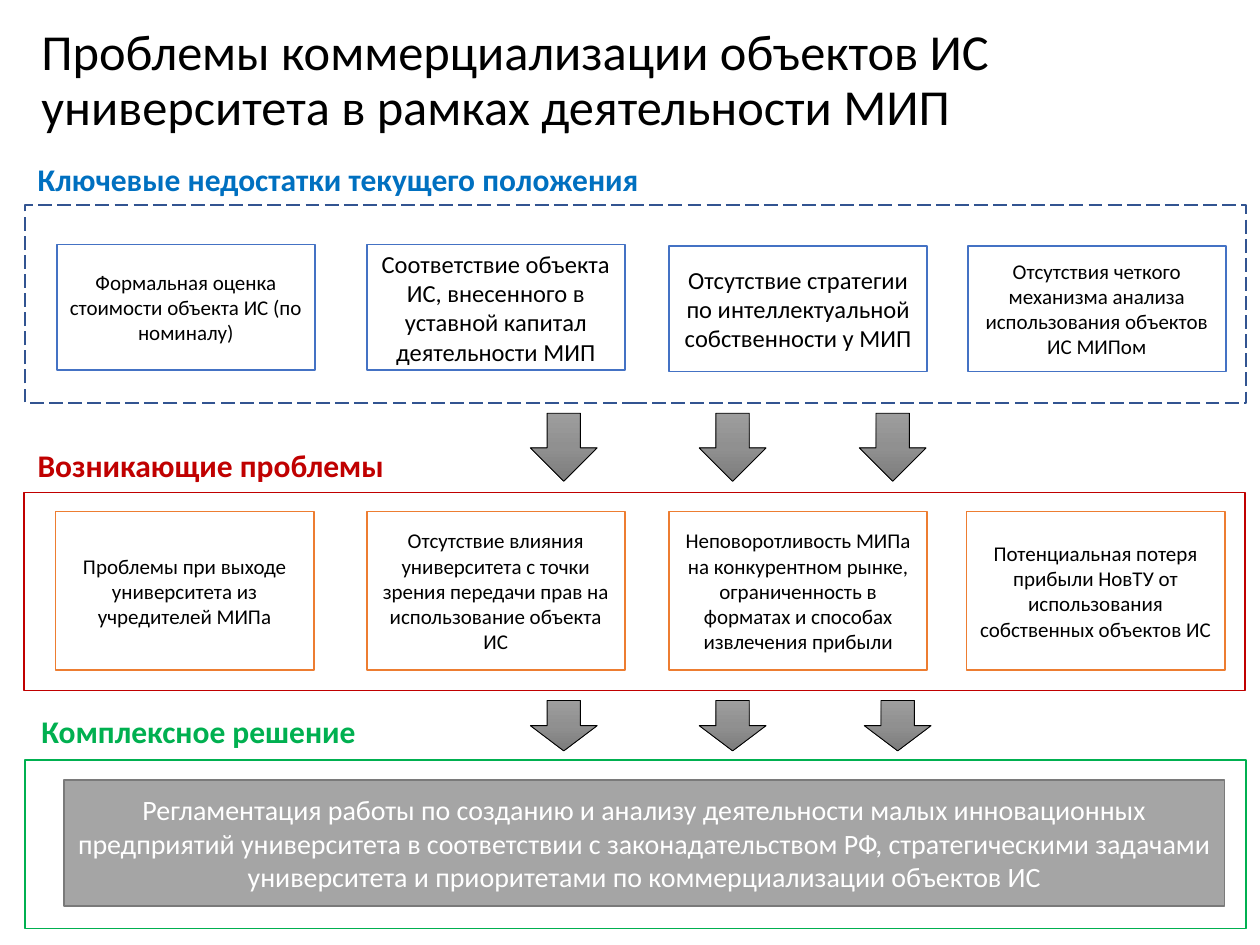
from copy import deepcopy
from dataclasses import dataclass

from pptx import Presentation
from pptx.dml.color import RGBColor
from pptx.enum.dml import MSO_LINE
from pptx.enum.shapes import MSO_SHAPE
from pptx.enum.text import MSO_ANCHOR, MSO_AUTO_SIZE, PP_ALIGN
from pptx.oxml.ns import qn
from pptx.util import Inches, Pt

RECTANGLE = MSO_SHAPE.RECTANGLE
DOWN_ARROW = MSO_SHAPE.DOWN_ARROW
LONG_DASH = MSO_LINE.LONG_DASH
MIDDLE = MSO_ANCHOR.MIDDLE
CENTER = PP_ALIGN.CENTER
FIT_SHAPE = MSO_AUTO_SIZE.SHAPE_TO_FIT_TEXT


@dataclass(frozen=True)
class Theme:
    font: str = "Calibri"
    black: str = "000000"
    white: str = "FFFFFF"
    flaw_heading: str = "0070C0"
    flaw_frame: str = "325491"
    flaw_card: str = "4472C4"
    problem: str = "C00000"
    problem_card: str = "ED7D31"
    solution: str = "00B050"
    solution_fill: str = "A5A5A5"
    solution_line: str = "7A7A7A"
    arrow_stops: tuple = ((0, "9D9D9D"), (0.5, "909090"), (1, "7C7C7C"))
    title_size: float = 28.8
    heading_size: int = 18
    solution_size: int = 16
    large_size: int = 14
    small_size: int = 12
    line_width: int = 1
    arrow_line_width: float = 0.5


THEME = Theme()
CARD_WIDTH = 2.05
ARROW_WIDTH = 0.53

FLAWS = (
    (0.45, 1.94, THEME.small_size, "Формальная оценка стоимости объекта ИС (по номиналу)"),
    (2.91, 1.94, THEME.large_size,
     "Соответствие объекта ИС, внесенного в уставной капитал деятельности МИП"),
    (5.31, 1.95, THEME.large_size,
     "Отсутствие стратегии по интеллектуальной собственности у МИП"),
    (7.68, 1.95, THEME.small_size,
     "Отсутствия четкого механизма анализа использования объектов ИС МИПом"),
)
PROBLEMS = (
    (0.44, "Проблемы при выходе университета из учредителей МИПа"),
    (2.91, "Отсутствие влияния университета с точки зрения передачи прав "
           "на использование объекта ИС"),
    (5.31, "Неповоротливость МИПа на конкурентном рынке, ограниченность "
           "в форматах и способах извлечения прибыли"),
    (7.67, "Потенциальная потеря прибыли НовТУ от использования "
           "собственных объектов ИС"),
)
SOLUTION = (
    "Регламентация работы по созданию и анализу деятельности малых инновационных "
    "предприятий университета в соответствии с законадательством РФ, стратегическими "
    "задачами университета и приоритетами по коммерциализации объектов ИС"
)


def apply_format(target, values):
    for name, value in values.items():
        setattr(target, name, value)


def write_text(shape, text, size, color, frame_format, paragraph_format, bold=False):
    frame = shape.text_frame
    frame.text = text
    apply_format(frame, frame_format)
    paragraph = frame.paragraphs[0]
    apply_format(paragraph, paragraph_format)
    font = paragraph.runs[0].font
    apply_format(font, {"name": THEME.font, "size": Pt(size), "bold": bold})
    font.color.rgb = RGBColor.from_string(color)


def add_outlined(slide, preset, box, color, width=THEME.line_width):
    shape = slide.shapes.add_shape(preset, *map(Inches, box))
    shape.shadow.inherit = False
    shape.line.color.rgb = RGBColor.from_string(color)
    shape.line.width = Pt(width)
    return shape


def add_frame(slide, box, color, dash=None):
    frame = add_outlined(slide, RECTANGLE, box, color)
    frame.fill.background()
    frame.line.dash_style = dash


def add_card(slide, box, text, size, line, fill=THEME.white, color=THEME.black):
    card = add_outlined(slide, RECTANGLE, box, line)
    card.fill.solid()
    card.fill.fore_color.rgb = RGBColor.from_string(fill)
    write_text(card, text, size, color,
               {"word_wrap": True, "vertical_anchor": MIDDLE}, {"alignment": CENTER})


def add_arrow(slide, box):
    arrow = add_outlined(slide, DOWN_ARROW, box, THEME.black, THEME.arrow_line_width)
    arrow.fill.gradient()
    arrow.fill.gradient_angle = 270
    stops = arrow.element.spPr.find(qn("a:gradFill")).find(qn("a:gsLst"))
    stops.insert(1, deepcopy(stops[0]))
    for stop, (position, color) in zip(arrow.fill.gradient_stops, THEME.arrow_stops):
        stop.position = position
        stop.color.rgb = RGBColor.from_string(color)


def add_arrow_row(slide, lefts, top, height):
    for left in lefts:
        add_arrow(slide, (left, top, ARROW_WIDTH, height))


def add_title(slide, text):
    title = slide.shapes.add_textbox(*map(Inches, (0.23, 0.18, 8.74, 0.94)))
    write_text(title, text, THEME.title_size, THEME.black,
               {"word_wrap": True, "vertical_anchor": MIDDLE}, {"line_spacing": 0.9})


def add_heading(slide, box, text, color):
    heading = slide.shapes.add_textbox(*map(Inches, box))
    write_text(heading, text, THEME.heading_size, color,
               {"word_wrap": False, "auto_size": FIT_SHAPE}, {}, bold=True)


def main():
    presentation = Presentation()
    presentation.slide_width = Inches(10)
    presentation.slide_height = Inches(7.5)
    slide = presentation.slides.add_slide(presentation.slide_layouts[6])

    add_title(slide, "Проблемы коммерциализации объектов ИС университета "
                     "в рамках деятельности МИП")

    add_heading(slide, (0.2, 1.22, 5.01, 0.4),
                "Ключевые недостатки текущего положения", THEME.flaw_heading)
    add_frame(slide, (0.2, 1.63, 9.69, 1.57), THEME.flaw_frame, LONG_DASH)
    for left, top, size, text in FLAWS:
        add_card(slide, (left, top, CARD_WIDTH, 1), text, size, THEME.flaw_card)
    add_arrow_row(slide, (4.21, 5.55, 6.82), 3.28, 0.54)

    add_heading(slide, (0.2, 3.49, 2.97, 0.4), "Возникающие проблемы", THEME.problem)
    add_frame(slide, (0.19, 3.91, 9.69, 1.57), THEME.problem)
    for left, text in PROBLEMS:
        add_card(slide, (left, 4.06, CARD_WIDTH, 1.26), text,
                 THEME.small_size, THEME.problem_card)
    add_arrow_row(slide, (4.21, 5.55, 6.86), 5.56, 0.4)

    add_heading(slide, (0.23, 5.6, 2.7, 0.4), "Комплексное решение", THEME.solution)
    add_frame(slide, (0.2, 6.03, 9.69, 1.34), THEME.solution)
    add_card(slide, (0.51, 6.19, 9.21, 1), SOLUTION, THEME.solution_size,
             THEME.solution_line, THEME.solution_fill, THEME.white)

    presentation.save("out.pptx")


if __name__ == "__main__":
    main()
